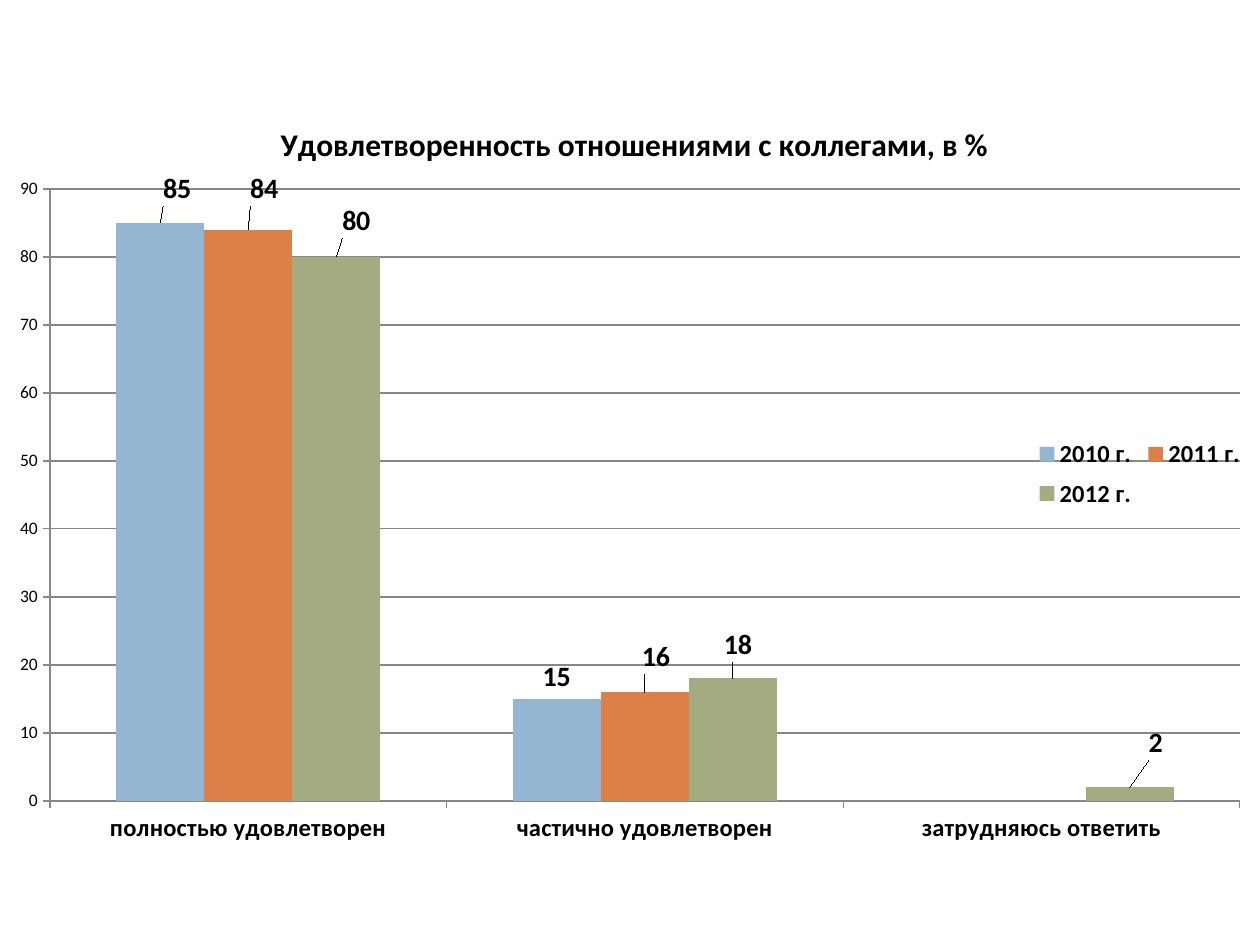
from pptx import Presentation
from pptx.chart.data import CategoryChartData
from pptx.dml.color import RGBColor
from pptx.enum.chart import XL_CHART_TYPE as ChartType
from pptx.enum.chart import XL_LABEL_POSITION as LabelPos
from pptx.enum.chart import XL_LEGEND_POSITION as LegendPos
from pptx.enum.chart import XL_TICK_MARK as Tick
from pptx.oxml import parse_xml
from pptx.oxml.ns import nsdecls
from pptx.util import Pt

PX = 914400 // 126
SLIDE_W, SLIDE_H = 1260, 945
CHART_X, CHART_Y, CHART_W, CHART_H = -5, 84, 1270, 775
COLORS = {
    "text": "000000",
    "grid": "878787",
    "2010 г.": "94B6D2",
    "2011 г.": "DD8047",
    "2012 г.": "A5AB81",
}
TITLE = "Удовлетворенность отношениями с коллегами, в %"
ANSWERS = ["полностью удовлетворен", "частично удовлетворен", "затрудняюсь ответить"]
YEARS = {
    "2010 г.": [85, 15, None],
    "2011 г.": [84, 16, None],
    "2012 г.": [80, 18, 2],
}
LABEL_SHIFTS = {
    "2010 г.": {0: (17, -12)},
    "2011 г.": {0: (16, -18), 1: (11, -13)},
    "2012 г.": {0: (20, -14), 1: (5, -11), 2: (26, -22)},
}


def rgb(name):
    """Return the named colour."""
    return RGBColor.from_string(COLORS[name])


def set_font(font, size, bold=False):
    """Format chart text."""
    font.name = "Calibri"
    font.size = Pt(size)
    font.bold = bold
    font.color.rgb = rgb("text")


def make_layout(x, y, w=None, h=None, edge=True, inner=False):
    """Build a manual chart layout from px lengths."""
    parts = ['<c:layoutTarget val="inner"/>'] if inner else []
    if edge:
        parts += ['<c:xMode val="edge"/>', '<c:yMode val="edge"/>']
    lengths = {"x": (x, CHART_W), "y": (y, CHART_H), "w": (w, CHART_W), "h": (h, CHART_H)}
    for tag, (length, whole) in lengths.items():
        if length is not None:
            parts.append(f'<c:{tag} val="{length / whole:.4f}"/>')
    body = "".join(parts)
    return parse_xml(
        f'<c:layout {nsdecls("c")}><c:manualLayout>{body}</c:manualLayout></c:layout>'
    )


def place(parent, layout, after=None):
    """Put a layout first in a chart part, or after one of its children."""
    for old in parent.xpath("c:layout"):
        parent.remove(old)
    if after:
        parent.xpath(after)[0].addnext(layout)
    else:
        parent.insert(0, layout)


def add_chart(s):
    """Add the clustered column chart."""
    data = CategoryChartData()
    data.categories = ANSWERS
    for year, values in YEARS.items():
        data.add_series(year, values)
    box = [v * PX for v in (CHART_X, CHART_Y, CHART_W, CHART_H)]
    chart = s.shapes.add_chart(ChartType.COLUMN_CLUSTERED, *box, data).chart
    set_font(chart.font, 10)
    plot = chart.plots[0]
    plot.gap_width = 150
    plot.overlap = 0
    plot.vary_by_categories = False
    place(chart.element.xpath("c:chart/c:plotArea")[0],
          make_layout(55, 105, 1190, 612, inner=True))
    return chart


def format_title(chart):
    """Write and place the chart title."""
    chart.has_title = True
    p = chart.chart_title.text_frame.paragraphs[0]
    r = p.add_run()
    r.text = TITLE
    set_font(r.font, 18, True)
    place(chart.element.xpath("c:chart/c:title")[0], make_layout(280, 33), "c:tx")


def format_axes(chart):
    """Format both axes and the gridlines."""
    values, answers = chart.value_axis, chart.category_axis
    values.minimum_scale, values.maximum_scale, values.major_unit = 0, 90, 10
    values.has_major_gridlines = True
    for axis, size, bold in ((values, 10, False), (answers, 14, True)):
        axis.major_tick_mark = Tick.OUTSIDE
        set_font(axis.tick_labels.font, size, bold)
    for part in (values, answers, values.major_gridlines):
        part.format.line.color.rgb = rgb("grid")
        part.format.line.width = Pt(0.75)


def format_series(ser):
    """Colour one year and shift its value labels."""
    ser.format.fill.solid()
    ser.format.fill.fore_color.rgb = rgb(ser.name)
    ser.invert_if_negative = False
    labels = ser.data_labels
    labels.show_value = True
    labels.position = LabelPos.OUTSIDE_END
    set_font(labels.font, 16, True)
    for i, (dx, dy) in LABEL_SHIFTS[ser.name].items():
        label = ser.points[i].data_label
        label.position = LabelPos.OUTSIDE_END
        set_font(label.font, 16, True)
        point = ser.data_labels._element.xpath(f"c:dLbl[c:idx/@val='{i}']")[0]
        place(point, make_layout(dx, dy, edge=False), "c:idx")


def format_legend(chart):
    """Place the legend over the plot."""
    chart.has_legend = True
    legend = chart.legend
    legend.position = LegendPos.RIGHT
    legend.include_in_layout = True
    set_font(legend.font, 14, True)
    place(chart.element.xpath("c:chart/c:legend")[0],
          make_layout(1036, 346, 218, 88), "c:legendPos")


def main():
    """Build and save the slide."""
    prs = Presentation()
    prs.slide_width, prs.slide_height = SLIDE_W * PX, SLIDE_H * PX
    s = prs.slides.add_slide(prs.slide_layouts[6])
    chart = add_chart(s)
    format_title(chart)
    format_axes(chart)
    for ser in chart.plots[0].series:
        format_series(ser)
    format_legend(chart)
    prs.save("out.pptx")


if __name__ == "__main__":
    main()
